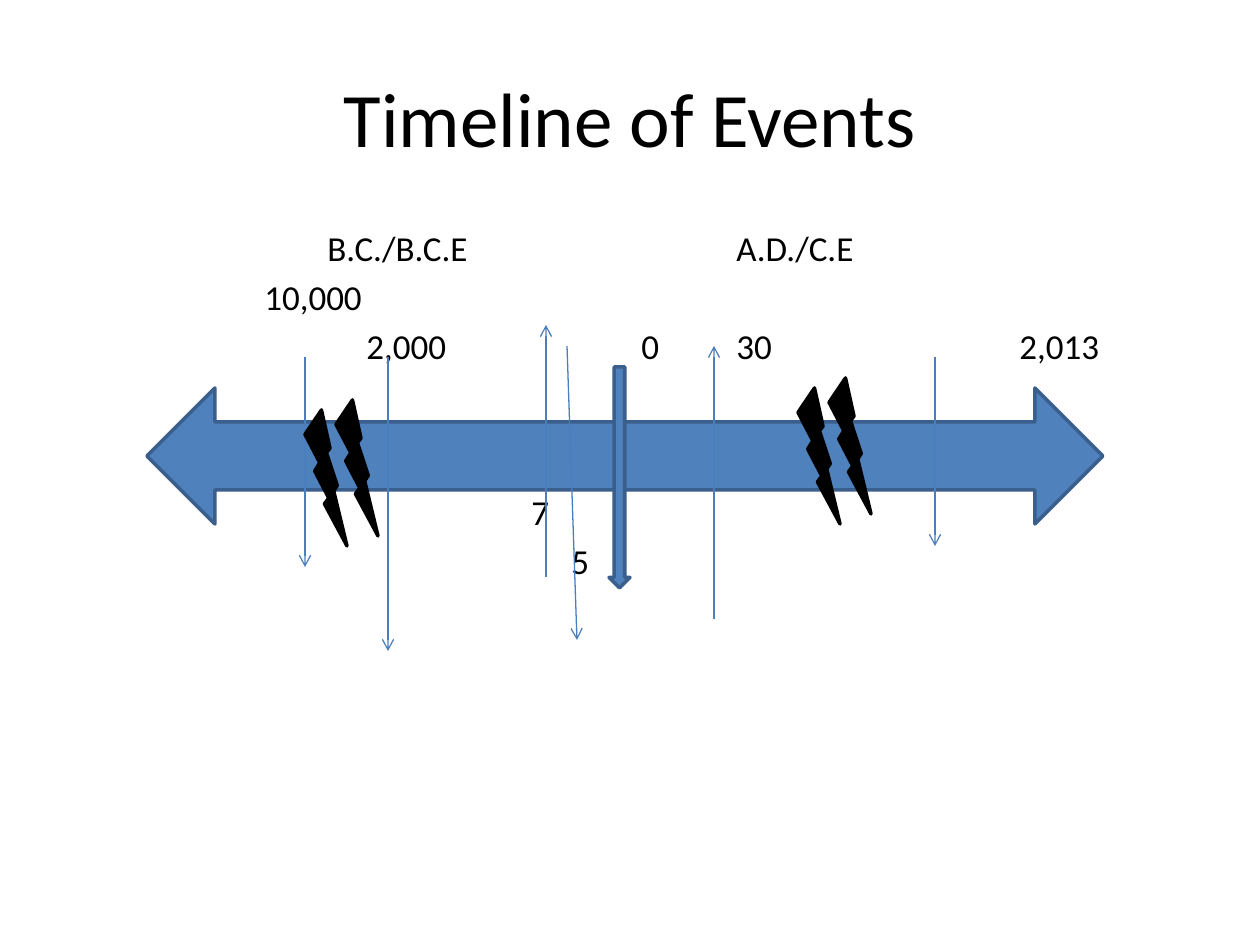
from lxml.etree import SubElement
from pptx import Presentation
from pptx.dml.color import RGBColor
from pptx.enum.shapes import MSO_CONNECTOR, MSO_SHAPE
from pptx.enum.text import MSO_ANCHOR, PP_ALIGN
from pptx.oxml.ns import qn
from pptx.util import Emu, Pt

PX_PER_INCH = 126
FONT = "Calibri"
BLACK = RGBColor(0x00, 0x00, 0x00)
BLUE = RGBColor(0x4F, 0x81, 0xBD)
DARK_BLUE = RGBColor(0x3A, 0x5F, 0x8C)
MARKER_BLUE = RGBColor(0x4B, 0x7E, 0xBC)

LABEL_BOX = (63, 220, 1134, 624)
LABEL_TEXT_LEFT = 76
# Space before in points, then (x, label) pairs
LABEL_ROWS = [
    (0, [(328, "B.C./B.C.E"), (737, "A.D./C.E")]),
    (4, [(265, "10,000")]),
    (4, [(367, "2,000"), (642, "0"), (737, "30"), (1020, "2,013")]),
    (71, [(532, "7")]),
    (4, [(572, "5")]),
]
MARKERS = [
    (305, 357, 305, 567),
    (388, 357, 388, 651),
    (546, 577, 546, 325),
    (567, 346, 577, 640),
    (935, 357, 935, 546),
    (714, 619, 714, 346),
]
BREAKS = [(305, 410), (798, 388)]
BOLT_SIZE = (42, 136)
BOLT_OFFSET = (31, -10)


def px(*lengths):
    return [Emu(round(length * 914400 / PX_PER_INCH)) for length in lengths]


def format_runs(paragraph, size):
    for run in paragraph.runs:
        run.font.name = FONT
        run.font.size = Pt(size)
        run.font.color.rgb = BLACK


def set_title(slide, text):
    title = slide.shapes.title
    title.left, title.top, title.width, title.height = px(63, 38, 1134, 157)
    title.text_frame.text = text
    title.text_frame.vertical_anchor = MSO_ANCHOR.MIDDLE
    paragraph = title.text_frame.paragraphs[0]
    paragraph.alignment = PP_ALIGN.CENTER
    format_runs(paragraph, 44)


def add_tab_stops(paragraph, positions):
    tab_list = SubElement(paragraph._p.get_or_add_pPr(), qn("a:tabLst"))
    for position in px(*positions):
        SubElement(tab_list, qn("a:tab"), pos=str(position), algn="l")


def add_labels(slide):
    """Put the rows of dates in one text box, each label on its own tab stop."""
    text_frame = slide.shapes.add_textbox(*px(*LABEL_BOX)).text_frame
    text_frame.word_wrap = True
    for index, (space_before, labels) in enumerate(LABEL_ROWS):
        paragraph = text_frame.add_paragraph() if index else text_frame.paragraphs[0]
        paragraph.text = "".join(f"\t{label}" for _, label in labels)
        paragraph.space_before = Pt(space_before)
        add_tab_stops(paragraph, [x - LABEL_TEXT_LEFT for x, _ in labels])
        format_runs(paragraph, 20)


def add_preset(slide, preset, box, fill, line):
    shape = slide.shapes.add_shape(preset, *px(*box))
    shape.shadow.inherit = False
    shape.fill.solid()
    shape.fill.fore_color.rgb = fill
    shape.line.color.rgb = line
    shape.line.width = Pt(2)


def add_marker(slide, ends):
    connector = slide.shapes.add_connector(MSO_CONNECTOR.STRAIGHT, *px(*ends))
    connector.line.color.rgb = MARKER_BLUE
    connector.line.width = Pt(0.75)
    SubElement(connector.line._get_or_add_ln(), qn("a:tailEnd"), type="arrow")
    SubElement(connector._element.spPr, qn("a:effectLst"))


def add_break(slide, left, top):
    """Mark a gap in the scale with a pair of lightning bolts."""
    dx, dy = BOLT_OFFSET
    for step in range(2):
        box = (left + step * dx, top + step * dy, *BOLT_SIZE)
        add_preset(slide, MSO_SHAPE.LIGHTNING_BOLT, box, BLACK, BLACK)


def main():
    presentation = Presentation()
    presentation.slide_width, presentation.slide_height = px(1260, 945)
    slide = presentation.slides.add_slide(presentation.slide_layouts[5])
    set_title(slide, "Timeline of Events")
    add_labels(slide)
    add_preset(slide, MSO_SHAPE.LEFT_RIGHT_ARROW, (147, 388, 956, 136), BLUE, DARK_BLUE)
    add_preset(slide, MSO_SHAPE.DOWN_ARROW, (609, 367, 21, 221), BLUE, DARK_BLUE)
    for ends in MARKERS:
        add_marker(slide, ends)
    for left, top in BREAKS:
        add_break(slide, left, top)
    presentation.save("out.pptx")


if __name__ == "__main__":
    main()
